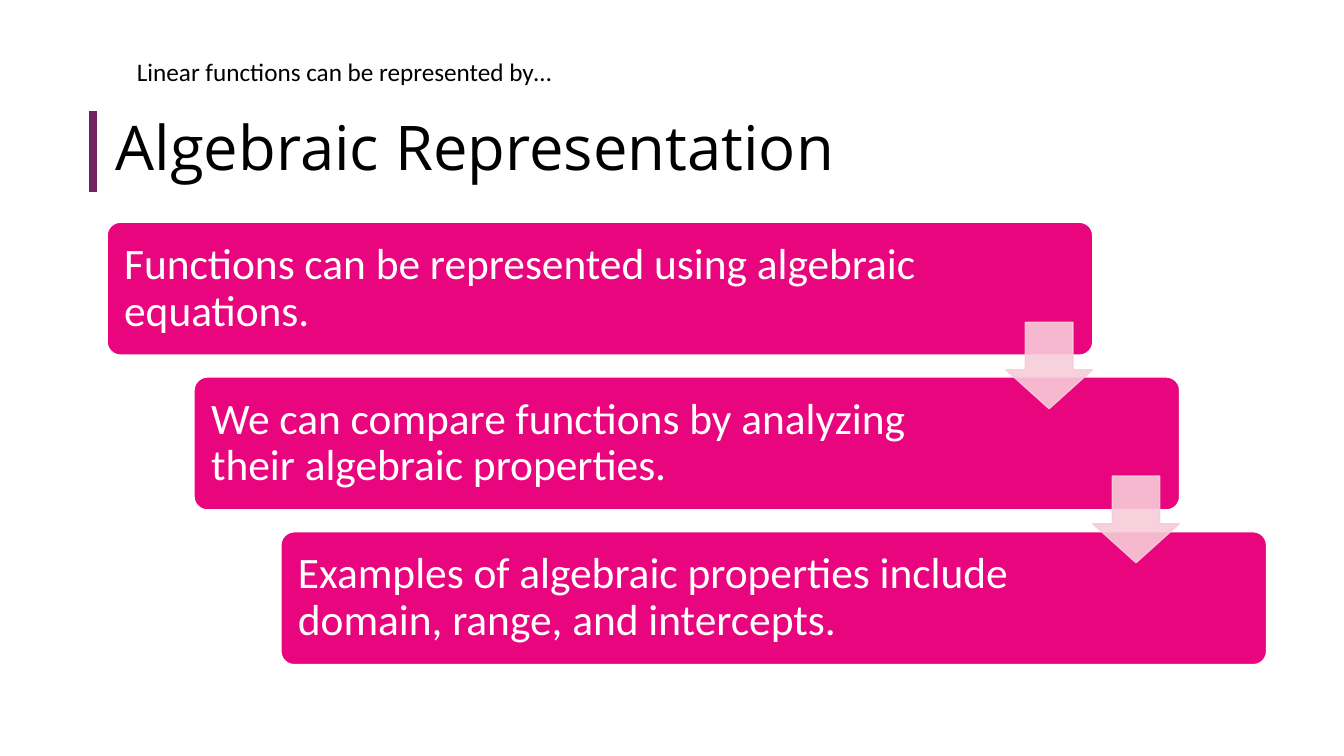
from dataclasses import dataclass

from lxml.etree import SubElement
from pptx import Presentation
from pptx.dml.color import RGBColor
from pptx.enum.shapes import MSO_CONNECTOR, MSO_SHAPE
from pptx.enum.text import MSO_ANCHOR
from pptx.oxml.ns import qn
from pptx.util import Cm, Pt


@dataclass(frozen=True)
class Theme:
    ink: RGBColor = RGBColor(0x00, 0x00, 0x00)
    white: RGBColor = RGBColor(0xFF, 0xFF, 0xFF)
    accent: RGBColor = RGBColor(0x72, 0x22, 0x62)
    card: RGBColor = RGBColor(0xE9, 0x05, 0x7E)
    arrow: RGBColor = RGBColor(0xF7, 0xCC, 0xD8)
    arrow_opacity: int = 90
    heading_font: str = "Open Sans"
    body_font: str = "Calibri"
    title_size: int = 44
    card_size: int = 31
    lead_size: int = 18


class SlideBuilder:
    def __init__(self, slide, theme):
        self.slide = slide
        self.theme = theme

    def text(self, box, content, font, size, color, spacing=1.0, inset=None,
             anchor=MSO_ANCHOR.TOP):
        shape = self.slide.shapes.add_textbox(*map(Cm, box))
        frame = shape.text_frame
        frame.word_wrap = True
        frame.vertical_anchor = anchor
        if inset is not None:
            frame.margin_left = frame.margin_right = Cm(inset)
            frame.margin_top = frame.margin_bottom = Cm(inset)
        paragraph = frame.paragraphs[0]
        paragraph.line_spacing = spacing
        run = paragraph.add_run()
        run.text = content
        run.font.name = font
        run.font.size = Pt(size)
        run.font.color.rgb = color

    def shape(self, kind, box, adjustments, fill, line, opacity=100):
        shape = self.slide.shapes.add_shape(kind, *map(Cm, box))
        shape.shadow.inherit = False
        for index, value in enumerate(adjustments):
            shape.adjustments[index] = value
        shape.fill.solid()
        shape.fill.fore_color.rgb = fill
        shape.line.color.rgb = line
        shape.line.width = Pt(1)
        if opacity < 100:
            for color in shape.element.spPr.iter(qn("a:srgbClr")):
                SubElement(color, qn("a:alpha"), val=str(opacity * 1000))

    def line(self, x, top, bottom, width):
        connector = self.slide.shapes.add_connector(
            MSO_CONNECTOR.STRAIGHT, Cm(x), Cm(top), Cm(x), Cm(bottom))
        connector.line.color.rgb = self.theme.accent
        connector.line.width = Pt(width)
        SubElement(connector.element.spPr, qn("a:effectLst"))

    def card(self, left, top, content, text_width):
        theme = self.theme
        self.shape(MSO_SHAPE.ROUNDED_RECTANGLE, (left, top, 24.84, 3.35), (0.1,),
                   theme.card, theme.white)
        self.text((left + 0.1, top + 0.1, text_width, 3.15), content,
                  theme.body_font, theme.card_size, theme.white,
                  spacing=0.9, inset=0.33, anchor=MSO_ANCHOR.MIDDLE)

    def arrow(self, left, top):
        theme = self.theme
        self.shape(MSO_SHAPE.DOWN_ARROW, (left, top, 2.18, 2.18), (0.55, 0.45),
                   theme.arrow, theme.arrow, theme.arrow_opacity)


def main():
    presentation = Presentation()
    presentation.slide_width = Cm(33.87)
    presentation.slide_height = Cm(19.05)
    slide = presentation.slides.add_slide(presentation.slide_layouts[6])
    theme = Theme()
    builder = SlideBuilder(slide, theme)

    builder.line(2.34, 2.79, 4.83, 6)
    builder.text((2.67, 2.79, 29.21, 2.03), "Algebraic Representation",
                 theme.heading_font, theme.title_size, theme.ink,
                 spacing=0.9, anchor=MSO_ANCHOR.MIDDLE)

    cards = [
        ("Functions can be represented using algebraic equations.", 21.21),
        ("We can compare functions by analyzing their algebraic properties.", 20.27),
        ("Examples of algebraic properties include domain, range, and intercepts.", 20.27),
    ]
    step_right = 2.19
    for index, (content, text_width) in enumerate(cards):
        builder.card(2.7 + index * step_right, 5.6 + index * 3.9, content, text_width)
    for index in range(len(cards) - 1):
        builder.arrow(25.35 + index * step_right, 8.12 + index * 3.88)

    builder.text((3.2, 1.3, 11.33, 1.02), "Linear functions can be represented by…",
                 theme.body_font, theme.lead_size, theme.ink)

    presentation.save("out.pptx")


if __name__ == "__main__":
    main()
